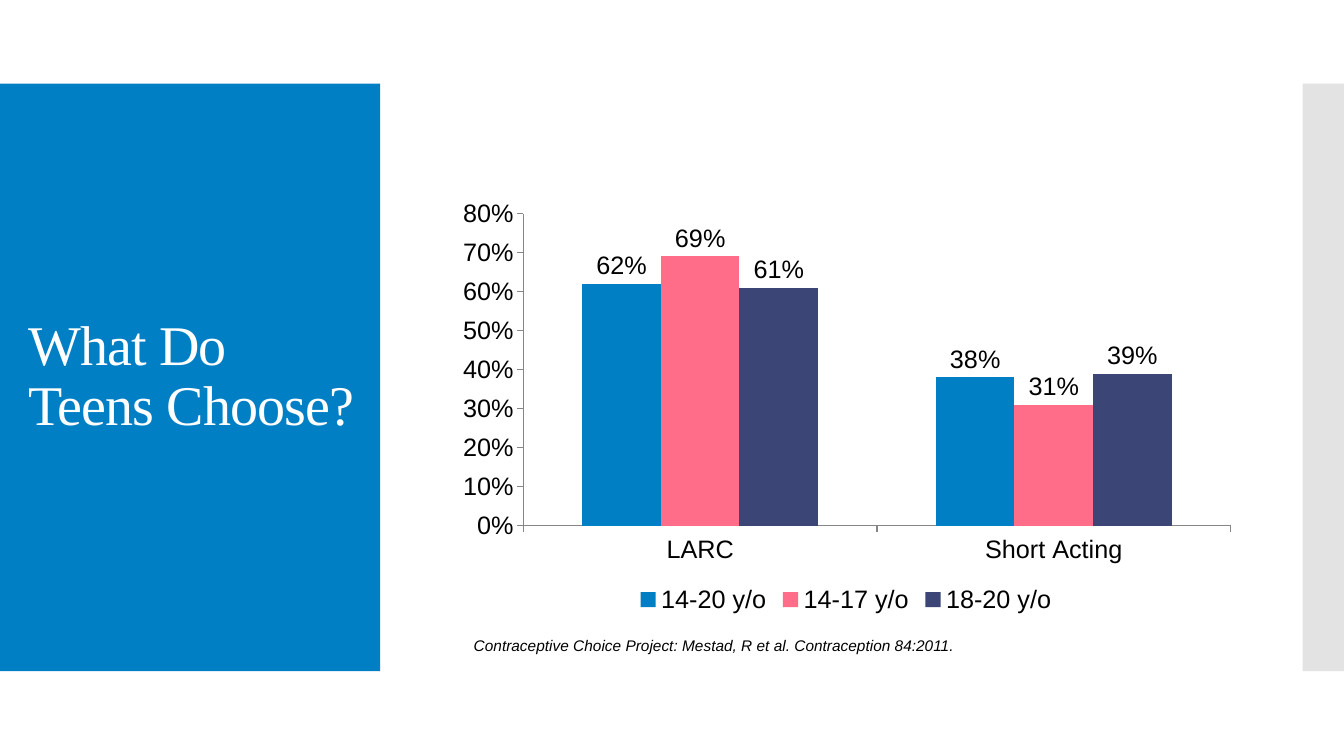
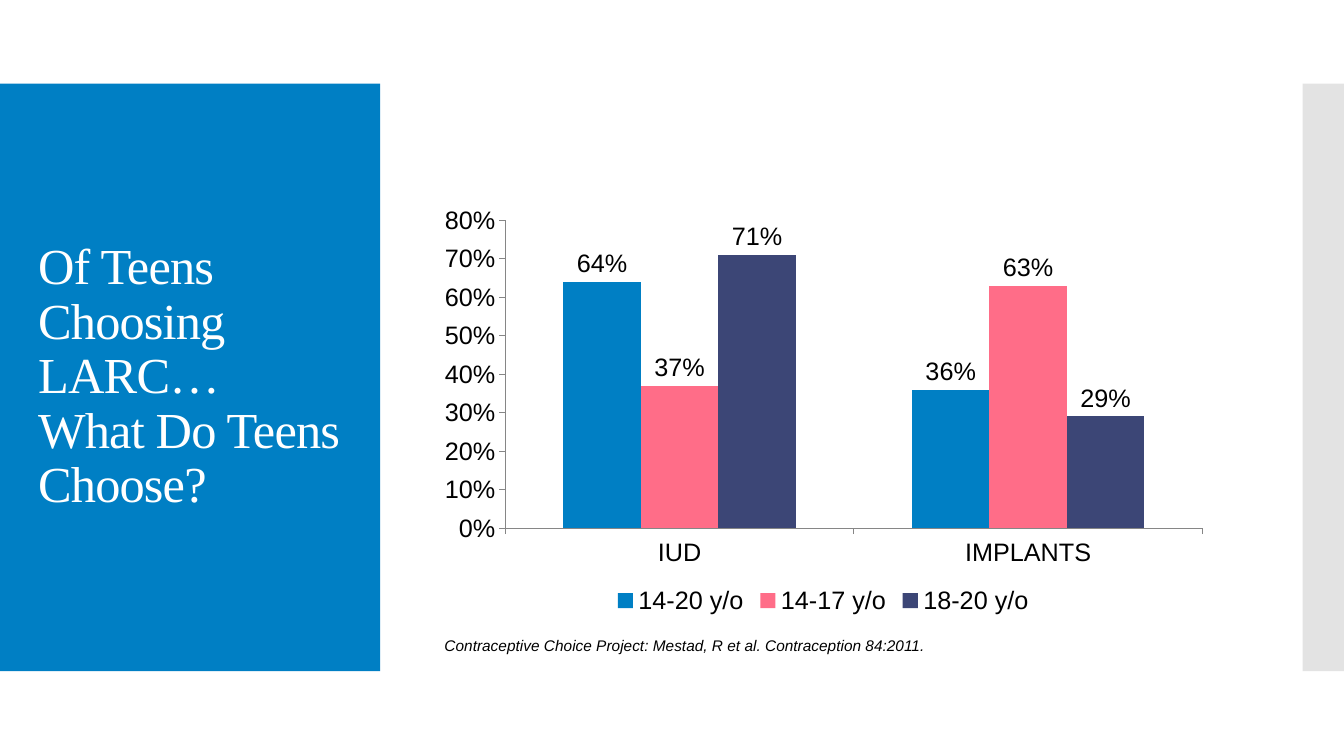
"""Build two slides comparing contraceptive choices of teens by age group."""
from lxml import etree
from pptx import Presentation
from pptx.chart.data import CategoryChartData
from pptx.dml.color import RGBColor
from pptx.enum.chart import XL_CHART_TYPE, XL_LABEL_POSITION, XL_LEGEND_POSITION, XL_TICK_MARK
from pptx.enum.shapes import MSO_SHAPE
from pptx.enum.text import MSO_ANCHOR
from pptx.oxml import parse_xml
from pptx.oxml.ns import nsdecls, qn
from pptx.util import Inches, Pt

THEME = {
    "title": {"name": "Times New Roman", "color": "FFFFFF"},
    "title_tracking": "-60",
    "title_spacing": 0.9,
    "caption": {"name": "Arial", "size": Pt(11), "italic": True, "color": "000000"},
    "chart": {"name": "Arial", "size": Pt(18), "color": "000000"},
    "axis": "868686",
    "series": ("007FC4", "FF6D88", "3C4676"),
}
SLIDE_WIDTH, SLIDE_HEIGHT = 13.33, 7.5
BAND_TOP, BAND_HEIGHT = 0.83, 5.83
BANDS = (
    {"left": 0, "width": 3.77, "color": "007FC4", "alpha": 100},
    {"left": 12.92, "width": 0.41, "color": "C8C8C8", "alpha": 50},
)
TITLE_TOP, TITLE_HEIGHT = 1.23, 5.03
CAPTION_TOP, CAPTION_WIDTH, CAPTION_HEIGHT = 6.26, 5.01, 0.29
PLOT_AREA = {"x": 0.091, "y": 0.067, "w": 0.897, "h": 0.719}
AGE_GROUPS = ("14-20 y/o", "14-17 y/o", "18-20 y/o")
CAPTION = "Contraceptive Choice Project: Mestad, R et al. Contraception 84:2011."

SLIDES = (
    {
        "title": "What Do Teens Choose?",
        "title_size": 40,
        "title_left": 0.18,
        "title_width": 3.47,
        "chart_box": (4.48, 1.83, 7.82, 4.31),
        "categories": ("LARC", "Short Acting"),
        "values": ((0.62, 0.38), (0.69, 0.31), (0.61, 0.39)),
        "caption_left": 4.6,
    },
    {
        "title": "Of Teens Choosing LARC…\vWhat Do Teens Choose?",
        "title_size": 36,
        "title_left": 0.28,
        "title_width": 3.22,
        "chart_box": (4.31, 1.9, 7.71, 4.25),
        "categories": ("IUD", "IMPLANTS"),
        "values": ((0.64, 0.36), (0.37, 0.63), (0.71, 0.29)),
        "caption_left": 4.31,
    },
)


def apply_font(font, formats):
    for attribute, value in formats.items():
        if attribute == "color":
            font.color.rgb = RGBColor.from_string(value)
        else:
            setattr(font, attribute, value)


def add_bands(slide):
    for band in BANDS:
        box = (band["left"], BAND_TOP, band["width"], BAND_HEIGHT)
        shape = slide.shapes.add_shape(MSO_SHAPE.RECTANGLE, *map(Inches, box))
        shape.shadow.inherit = False
        shape.line.fill.background()
        shape.fill.solid()
        shape.fill.fore_color.rgb = RGBColor.from_string(band["color"])
        if band["alpha"] < 100:
            color = shape.fill._xPr.find(".//" + qn("a:srgbClr"))
            etree.SubElement(color, qn("a:alpha")).set("val", str(band["alpha"] * 1000))


def add_text(slide, box, text, formats, wrap):
    frame = slide.shapes.add_textbox(*map(Inches, box)).text_frame
    frame.word_wrap = wrap
    paragraph = frame.paragraphs[0]
    paragraph.text = text
    for run in paragraph.runs:
        apply_font(run.font, formats)
    return frame


def add_title(slide, content):
    box = (content["title_left"], TITLE_TOP, content["title_width"], TITLE_HEIGHT)
    formats = {**THEME["title"], "size": Pt(content["title_size"])}
    frame = add_text(slide, box, content["title"], formats, True)
    frame.vertical_anchor = MSO_ANCHOR.MIDDLE
    paragraph = frame.paragraphs[0]
    paragraph.line_spacing = THEME["title_spacing"]
    for run in paragraph.runs:
        run.font._element.set("spc", THEME["title_tracking"])


def set_plot_area(chart):
    modes = "".join(f'<c:{axis}Mode val="edge"/>' for axis in "xy")
    sizes = "".join(f'<c:{name} val="{value}"/>' for name, value in PLOT_AREA.items())
    layout = parse_xml(
        f'<c:layout {nsdecls("c")}><c:manualLayout><c:layoutTarget val="inner"/>'
        f"{modes}{sizes}</c:manualLayout></c:layout>"
    )
    plot_area = chart._chartSpace.find(".//" + qn("c:plotArea"))
    for existing in plot_area.findall(qn("c:layout")):
        plot_area.remove(existing)
    plot_area.insert(0, layout)


def add_column_chart(slide, content):
    data = CategoryChartData(number_format="0%")
    data.categories = content["categories"]
    for name, values in zip(AGE_GROUPS, content["values"]):
        data.add_series(name, values)
    box = map(Inches, content["chart_box"])
    chart = slide.shapes.add_chart(XL_CHART_TYPE.COLUMN_CLUSTERED, *box, data).chart
    apply_font(chart.font, THEME["chart"])
    chart.has_title = False
    chart.has_legend = True
    chart.legend.position = XL_LEGEND_POSITION.BOTTOM
    chart.legend.include_in_layout = False
    set_plot_area(chart)

    for axis in (chart.category_axis, chart.value_axis):
        axis.has_major_gridlines = False
        axis.major_tick_mark = XL_TICK_MARK.OUTSIDE
        axis.format.line.color.rgb = RGBColor.from_string(THEME["axis"])
        axis.format.line.width = Pt(0.75)
    value_formats = {"minimum_scale": 0, "maximum_scale": 0.8, "major_unit": 0.1}
    for attribute, value in value_formats.items():
        setattr(chart.value_axis, attribute, value)

    plot = chart.plots[0]
    plot.vary_by_categories = False
    plot.gap_width = 150
    plot.overlap = 0
    plot.has_data_labels = True
    for target in (chart.value_axis.tick_labels, plot.data_labels):
        target.number_format = "0%"
        target.number_format_is_linked = False
    plot.data_labels.show_value = True
    plot.data_labels.position = XL_LABEL_POSITION.OUTSIDE_END
    for series, color in zip(plot.series, THEME["series"]):
        series.format.fill.solid()
        series.format.fill.fore_color.rgb = RGBColor.from_string(color)


def main():
    presentation = Presentation()
    presentation.slide_width = Inches(SLIDE_WIDTH)
    presentation.slide_height = Inches(SLIDE_HEIGHT)
    for content in SLIDES:
        slide = presentation.slides.add_slide(presentation.slide_layouts[6])
        add_bands(slide)
        add_title(slide, content)
        add_column_chart(slide, content)
        caption_box = (content["caption_left"], CAPTION_TOP, CAPTION_WIDTH, CAPTION_HEIGHT)
        add_text(slide, caption_box, CAPTION, THEME["caption"], False)
    presentation.save("out.pptx")


if __name__ == "__main__":
    main()
